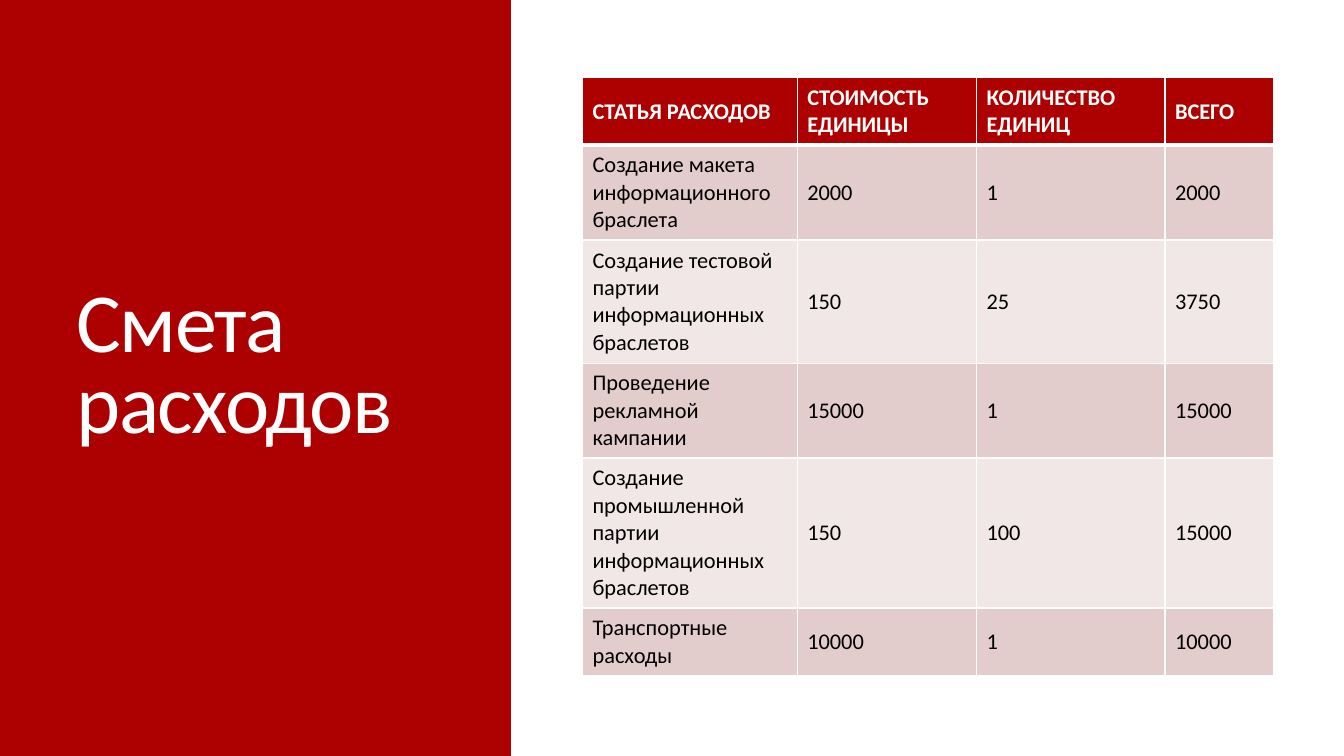
"""Build the expense estimate slide."""
from dataclasses import dataclass

from lxml import etree
from pptx import Presentation
from pptx.dml.color import RGBColor
from pptx.enum.shapes import MSO_SHAPE
from pptx.enum.text import MSO_ANCHOR, MSO_AUTO_SIZE, PP_ALIGN
from pptx.oxml.ns import qn
from pptx.util import Cm, Pt

RECTANGLE = MSO_SHAPE.RECTANGLE
MIDDLE, BOTTOM = MSO_ANCHOR.MIDDLE, MSO_ANCHOR.BOTTOM
NO_AUTOFIT = MSO_AUTO_SIZE.NONE
LEFT = PP_ALIGN.LEFT

COLORS = {
    "red": "AD0101",
    "white": "FFFFFF",
    "black": "000000",
    "odd_row": "E3CCCC",
    "even_row": "F1E7E7",
}
FONT = "Calibri"
HEADINGS = ("СТАТЬЯ РАСХОДОВ", "СТОИМОСТЬ ЕДИНИЦЫ", "КОЛИЧЕСТВО ЕДИНИЦ", "ВСЕГО")
COLUMN_WIDTHS = (5.41, 4.52, 4.75, 2.74)
HEADING_HEIGHT = 1.7


@dataclass(frozen=True)
class Expense:
    """One expense line and its row height in centimetres."""

    item: str
    unit_cost: int
    quantity: int
    height: float

    def texts(self) -> tuple[str, ...]:
        """Return the cell texts, ending with the total."""
        total = self.unit_cost * self.quantity
        return self.item, str(self.unit_cost), str(self.quantity), str(total)


EXPENSES = (
    Expense("Создание макета информационного браслета", 2000, 1, 2.39),
    Expense("Создание тестовой партии информационных браслетов", 150, 25, 3.1),
    Expense("Проведение рекламной кампании", 15000, 1, 2.39),
    Expense("Создание промышленной партии информационных браслетов", 150, 100, 3.78),
    Expense("Транспортные расходы", 10000, 1, 1.7),
)


def rgb(name: str) -> RGBColor:
    """Return a palette colour."""
    return RGBColor.from_string(COLORS[name])


def write(frame, text: str, *, size: float, color: str, bold: bool = False,
          line_spacing: float = 1.0, tracking: float = 0) -> None:
    """Write one formatted paragraph into a text frame."""
    frame.word_wrap = True
    paragraph = frame.paragraphs[0]
    paragraph.alignment = LEFT
    paragraph.line_spacing = line_spacing
    paragraph.space_before = Pt(0)
    run = paragraph.add_run()
    run.text = text
    run.font.name = FONT
    run.font.size = Pt(size)
    run.font.bold = bold
    run.font.color.rgb = rgb(color)
    if tracking:
        run.font._element.set("spc", str(round(tracking * 100)))


def add_borders(cell, top: float, bottom: float) -> None:
    """Give a cell white borders, with widths in points."""
    properties = cell._tc.get_or_add_tcPr()
    for side, width in (("L", 1), ("R", 1), ("T", top), ("B", bottom)):
        line = etree.SubElement(properties, qn(f"a:ln{side}"), w=str(Pt(width)))
        fill = etree.SubElement(line, qn("a:solidFill"))
        etree.SubElement(fill, qn("a:srgbClr"), val=COLORS["white"])


def add_title(slide) -> None:
    """Place the title on the red side."""
    title = slide.shapes.title
    title.left, title.top = Cm(1.68), Cm(2.13)
    title.width, title.height = Cm(9.63), Cm(9.32)
    frame = title.text_frame
    frame.auto_size = NO_AUTOFIT
    frame.vertical_anchor = BOTTOM
    write(frame, "Смета расходов", size=60, color="white", line_spacing=0.8, tracking=-1.2)


def add_panel(slide) -> None:
    """Draw the white panel behind the table."""
    panel = slide.shapes.add_shape(RECTANGLE, Cm(12.88), Cm(0), Cm(20.99), Cm(19.05))
    panel.shadow.inherit = False
    panel.fill.solid()
    panel.fill.fore_color.rgb = rgb("white")
    panel.line.fill.background()


def add_estimate(slide) -> None:
    """Draw the estimate table."""
    rows = [HEADINGS] + [expense.texts() for expense in EXPENSES]
    heights = [HEADING_HEIGHT] + [expense.height for expense in EXPENSES]
    estimate = slide.shapes.add_table(
        len(rows), len(HEADINGS), Cm(14.68), Cm(1.96),
        Cm(sum(COLUMN_WIDTHS)), Cm(sum(heights))).table
    for column, width in zip(estimate.columns, COLUMN_WIDTHS):
        column.width = Cm(width)
    for index, (texts, height) in enumerate(zip(rows, heights)):
        estimate.rows[index].height = Cm(height)
        heading = index == 0
        background = "red" if heading else "odd_row" if index % 2 else "even_row"
        for cell, text in zip(estimate.rows[index].cells, texts):
            add_borders(cell, top=3 if index == 1 else 1, bottom=3 if heading else 1)
            cell.fill.solid()
            cell.fill.fore_color.rgb = rgb(background)
            cell.vertical_anchor = MIDDLE
            write(cell.text_frame, text, size=16, bold=heading,
                  color="white" if heading else "black")


def main() -> None:
    """Build and save the presentation."""
    presentation = Presentation()
    presentation.slide_width, presentation.slide_height = Cm(33.87), Cm(19.05)
    slide = presentation.slides.add_slide(presentation.slide_layouts[5])
    slide.background.fill.solid()
    slide.background.fill.fore_color.rgb = rgb("red")
    add_title(slide)
    add_panel(slide)
    add_estimate(slide)
    presentation.save("out.pptx")


if __name__ == "__main__":
    main()
